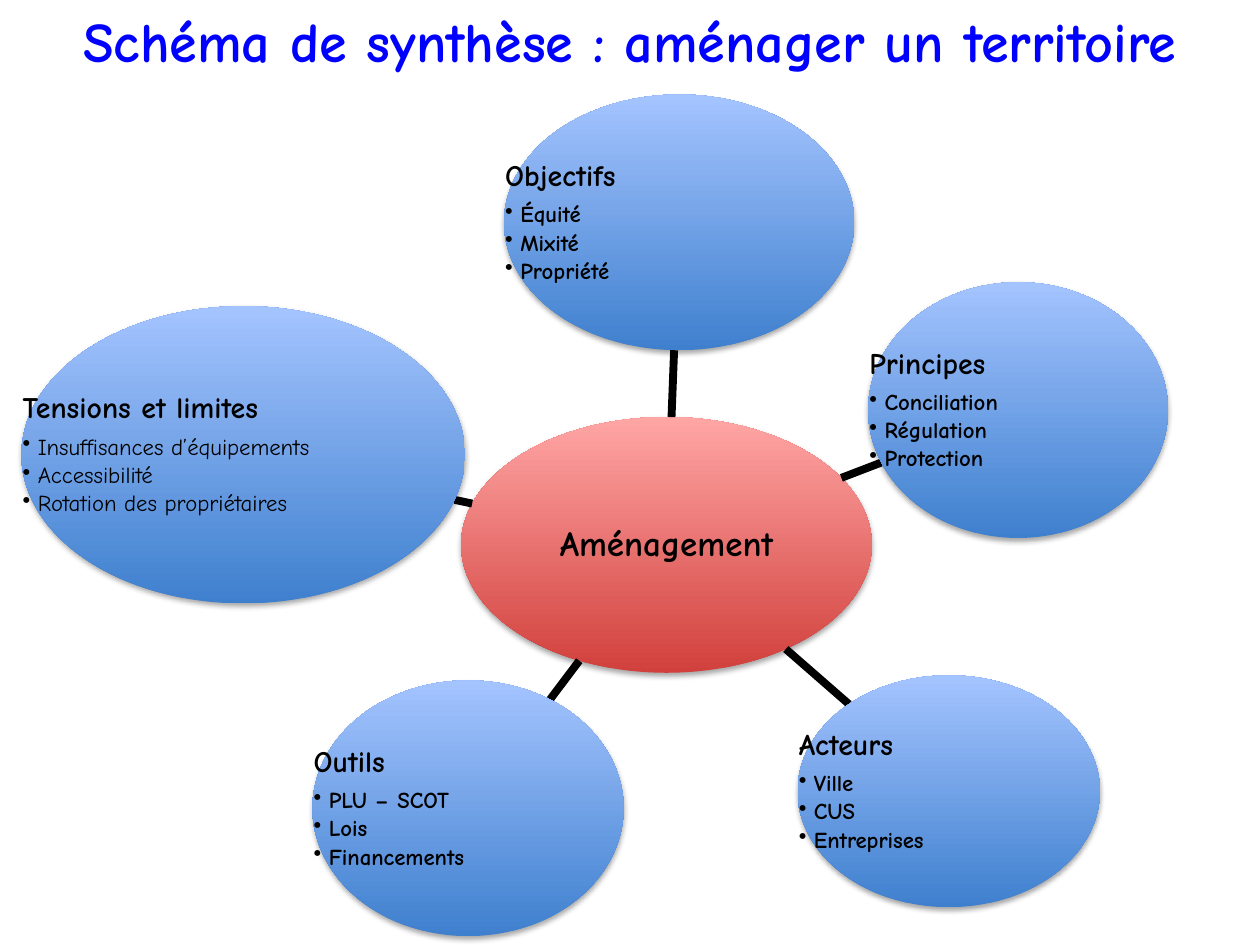
from math import hypot

from lxml import etree
from pptx import Presentation
from pptx.dml.color import RGBColor
from pptx.enum.shapes import MSO_CONNECTOR, MSO_SHAPE
from pptx.enum.text import MSO_ANCHOR, PP_ALIGN
from pptx.oxml.ns import qn
from pptx.util import Inches, Pt

OVAL, STRAIGHT = MSO_SHAPE.OVAL, MSO_CONNECTOR.STRAIGHT
MIDDLE = MSO_ANCHOR.MIDDLE
LEFT, CENTER = PP_ALIGN.LEFT, PP_ALIGN.CENTER

BLACK = RGBColor(0x00, 0x00, 0x00)
TITLE_BLUE = RGBColor(0x00, 0x00, 0xFF)
RED = (RGBColor(0xD1, 0x40, 0x3C), RGBColor(0xFF, 0xA6, 0xA5))
BLUE = (RGBColor(0x3F, 0x80, 0xCE), RGBColor(0xA4, 0xC4, 0xFF))
FONT = "Comic Neue"

COLS, ROWS = 100, 75
CELL = Inches(10) // COLS

TITLE_BOX = (0, 0, COLS, 6.4)
HUB_BOX = (36.6, 33.1, 32.6, 20.3)
THEMES = [
    ((40, 7.5, 27.8, 20.3), "Objectifs", ["Équité", "Mixité", "Propriété"], True),
    ((68.9, 22.4, 23.8, 20.3), "Principes",
     ["Conciliation", "Régulation", "Protection"], True),
    ((63.3, 53.6, 24, 18.4), "Acteurs", ["Ville", "CUS", "Entreprises"], True),
    ((24.8, 54, 24.7, 20.3), "Outils", ["PLU – SCOT", "Lois", "Financements"], True),
    ((1.7, 24.3, 35.2, 23.6), "Tensions et limites",
     ["Insuffisances d’équipements", "Accessibilité", "Rotation des propriétaires"],
     False),
]


def emu(values):
    """Turn grid units into EMU."""
    return [round(v * CELL) for v in values]


def add_text_frame(slide, box, inset):
    """Add a wrapping, vertically centred text box and return its frame."""
    tf = slide.shapes.add_textbox(*emu(box)).text_frame
    tf.word_wrap = True
    tf.vertical_anchor = MIDDLE
    tf.margin_left = tf.margin_right = tf.margin_top = tf.margin_bottom = inset
    return tf


def style(p, text, size, color=BLACK, bold=True, align=LEFT, after=0, spacing=0.9):
    """Write one paragraph and set its font and spacing."""
    p.text = text
    p.alignment = align
    p.line_spacing = spacing
    p.space_after = Pt(after)
    f = p.font
    f.name, f.size, f.bold = FONT, Pt(size), bold
    f.color.rgb = color


def add_bullet(p):
    """Give a paragraph a hanging round bullet."""
    pPr = p._p.get_or_add_pPr()
    pPr.set("marL", str(Inches(0.12)))
    pPr.set("indent", str(-Inches(0.12)))
    bu = etree.Element(qn("a:buChar"), char="•")
    pPr.find(qn("a:defRPr")).addprevious(bu)


def add_oval(slide, box, colors):
    """Draw a shaded ellipse with a soft shadow below it."""
    s = slide.shapes.add_shape(OVAL, *emu(box))
    s.fill.gradient()
    s.fill.gradient_angle = 90
    for stop, color in zip(s.fill.gradient_stops, colors):
        stop.color.rgb = color
    s.line.fill.background()
    s.shadow.inherit = False
    effects = s._element.spPr.find(qn("a:effectLst"))
    shadow = etree.SubElement(effects, qn("a:outerShdw"), blurRad=str(Pt(3.1)),
                              dist=str(Pt(1.8)), dir="5400000", rotWithShape="0")
    color = etree.SubElement(shadow, qn("a:srgbClr"), val=str(BLACK))
    etree.SubElement(color, qn("a:alpha"), val="35000")


def center(box):
    """Return the centre of a box."""
    x, y, w, h = box
    return x + w / 2, y + h / 2


def edge_point(box, target):
    """Return where the ray from an ellipse's centre to a target crosses its edge."""
    cx, cy = center(box)
    dx, dy = target[0] - cx, target[1] - cy
    t = 1 / hypot(dx / (box[2] / 2), dy / (box[3] / 2))
    return cx + t * dx, cy + t * dy


def add_spoke(slide, hub, box):
    """Link the hub's edge to the edge of a theme ellipse."""
    start, end = edge_point(hub, center(box)), edge_point(box, center(hub))
    c = slide.shapes.add_connector(STRAIGHT, *emu(start + end))
    c.line.color.rgb = BLACK
    c.line.width = Pt(4.5)
    etree.SubElement(c._element.spPr, qn("a:effectLst"))


def add_title(slide, box):
    """Place the slide title."""
    tf = add_text_frame(slide, box, Inches(0.05))
    style(tf.paragraphs[0], "Schéma de synthèse : aménager un territoire", 32,
          TITLE_BLUE, align=CENTER, spacing=1.0)


def add_hub(slide, box):
    """Place the central ellipse with its label."""
    add_oval(slide, box, RED)
    tf = add_text_frame(slide, box, Inches(0.01))
    style(tf.paragraphs[0], "Aménagement", 20, align=CENTER)


def add_theme(slide, box, heading, items, bold):
    """Place a theme ellipse with its heading and bullet list."""
    add_oval(slide, box, BLUE)
    tf = add_text_frame(slide, box, Inches(0.01))
    style(tf.paragraphs[0], heading, 17, after=6)
    for item in items:
        p = tf.add_paragraph()
        style(p, item, 13, bold=bold, after=2)
        p.level = 1
        add_bullet(p)


def main():
    """Build and save the slide."""
    prs = Presentation()
    prs.slide_width, prs.slide_height = COLS * CELL, ROWS * CELL
    slide = prs.slides.add_slide(prs.slide_layouts[6])
    add_title(slide, TITLE_BOX)
    add_hub(slide, HUB_BOX)
    for box, heading, items, bold in THEMES:
        add_spoke(slide, HUB_BOX, box)
        add_theme(slide, box, heading, items, bold)
    prs.save("out.pptx")


if __name__ == "__main__":
    main()
